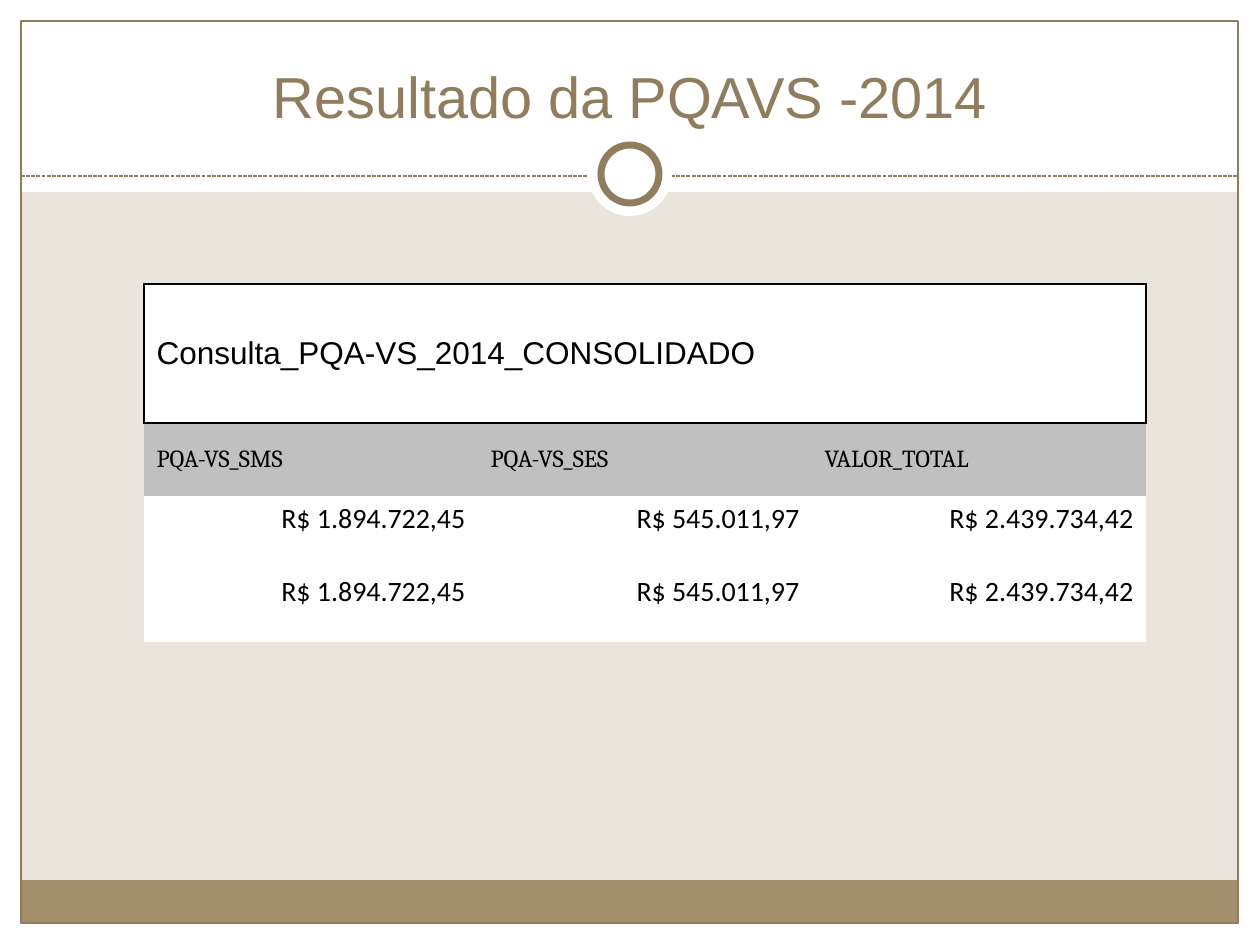
"""Build the PQAVS 2014 results slide with its consolidated table."""
from lxml import etree
from pptx import Presentation
from pptx import util as u
from pptx.dml.color import RGBColor
from pptx.enum import dml, shapes, text
from pptx.oxml.ns import qn

COLORS = {"paper": "E9E5DC", "white": "FFFFFF", "band": "A28E6A",
          "accent": "8F7D5E", "black": "000000", "header": "C0C0C0"}
TITLE = "Resultado da PQAVS -2014"
CAPTION = "Consulta_PQA-VS_2014_CONSOLIDADO"
HEADERS = ["PQA-VS_SMS", "PQA-VS_SES", "VALOR_TOTAL"]
AMOUNTS = ["R$ 1.894.722,45", "R$ 545.011,97", "R$ 2.439.734,42"]
ROWS = [
    {"texts": [CAPTION], "height": 139, "fill": "white", "size": 18, "font": "Arial"},
    {"texts": HEADERS, "height": 73, "fill": "header", "size": 14, "font": "Cambria"},
    {"texts": AMOUNTS, "height": 73, "fill": "white", "size": 16, "font": "Calibri"},
    {"texts": AMOUNTS, "height": 73, "fill": "white", "size": 16, "font": "Calibri"},
]
CAPTION_BORDERS = [("L", "R", "T", "B"), ("T",), ("R", "T")]
FRAME = [
    ("RECTANGLE", (0, 924, 1260, 21), "white", None, 0),
    ("RECTANGLE", (0, 0, 1260, 192), "white", None, 0),
    ("RECTANGLE", (0, 0, 21, 945), "white", None, 0),
    ("RECTANGLE", (1239, 0, 21, 945), "white", None, 0),
    ("RECTANGLE", (21, 880, 1217, 43), "band", None, 0),
    ("RECTANGLE", (21, 21, 1217, 902), None, "accent", 0.75),
]
MEDALLION = [
    ("OVAL", (588, 132, 84, 84), "white", None, 0),
    ("OVAL", (601, 145, 58, 58), "white", "accent", 4),
]
DIVIDER = (21, 176, 1239, 176)
TABLE_LEFT, TABLE_TOP, COLUMN_WIDTH = 144, 284, 334
PLAIN_TABLE_STYLE = "{2D5ABB26-0587-4C30-8999-92F81FD0307C}"


def px(*lengths):
    return [u.Emu(round(length * 914400 / 126)) for length in lengths]


def color(name):
    return RGBColor.from_string(COLORS[name])


def paint(fill, name):
    if name:
        fill.solid()
        fill.fore_color.rgb = color(name)
    else:
        fill.background()


def write(frame, words, size, font, ink="black", align="LEFT"):
    paragraph = frame.paragraphs[0]
    paragraph.alignment = text.PP_ALIGN[align]
    run = paragraph.add_run()
    run.text = words
    run.font.size = u.Pt(size)
    run.font.name = font
    run.font.color.rgb = color(ink)


def add_shapes(slide, items):
    for kind, box, fill, line, width in items:
        shape = slide.shapes.add_shape(shapes.MSO_SHAPE[kind], *px(*box))
        shape.shadow.inherit = False
        paint(shape.fill, fill)
        paint(shape.line.fill, line)
        if line:
            shape.line.width = u.Pt(width)


def add_divider(slide):
    divider = slide.shapes.add_connector(shapes.MSO_CONNECTOR.STRAIGHT, *px(*DIVIDER))
    divider.line.color.rgb = color("accent")
    divider.line.width = u.Pt(0.75)
    divider.line.dash_style = dml.MSO_LINE.SQUARE_DOT
    properties = divider._element.spPr
    etree.SubElement(properties, qn("a:effectLst"))


def add_borders(cell, sides):
    properties = cell._tc.get_or_add_tcPr()
    for side in sides:
        line = etree.SubElement(properties, qn(f"a:ln{side}"), w=str(u.Pt(1)))
        fill = etree.SubElement(line, qn("a:solidFill"))
        etree.SubElement(fill, qn("a:srgbClr"), val=COLORS["black"])


def add_table(slide):
    width, height = COLUMN_WIDTH * len(HEADERS), sum(row["height"] for row in ROWS)
    box = px(TABLE_LEFT, TABLE_TOP, width, height)
    table = slide.shapes.add_table(len(ROWS), len(HEADERS), *box).table
    table._tbl.tblPr.find(qn("a:tableStyleId")).text = PLAIN_TABLE_STYLE
    table.first_row = table.horz_banding = False
    for column in table.columns:
        column.width = px(COLUMN_WIDTH)[0]
    for index, sides in enumerate(CAPTION_BORDERS):
        add_borders(table.cell(0, index), sides)
    table.cell(0, 0).merge(table.cell(0, len(HEADERS) - 1))
    for row_index, row in enumerate(ROWS):
        table.rows[row_index].height = px(row["height"])[0]
        is_amount = row["texts"] is AMOUNTS
        for column_index, words in enumerate(row["texts"]):
            cell = table.cell(row_index, column_index)
            paint(cell.fill, row["fill"])
            cell.vertical_anchor = text.MSO_ANCHOR["TOP" if is_amount else "MIDDLE"]
            write(cell.text_frame, words, row["size"], row["font"],
                  align="RIGHT" if is_amount else "LEFT")


def add_title(slide):
    title = slide.shapes.title
    title.left, title.top, title.width, title.height = px(42, 31, 1176, 105)
    title.text_frame.vertical_anchor = text.MSO_ANCHOR.BOTTOM
    write(title.text_frame, TITLE, 33, "Arial", ink="accent", align="CENTER")
    slide.shapes._spTree.append(title._element)


def main():
    presentation = Presentation()
    presentation.slide_width, presentation.slide_height = px(1260, 945)
    slide = presentation.slides.add_slide(presentation.slide_layouts[5])
    paint(slide.background.fill, "paper")
    add_shapes(slide, FRAME)
    add_divider(slide)
    add_shapes(slide, MEDALLION)
    add_title(slide)
    add_table(slide)
    presentation.save("out.pptx")


if __name__ == "__main__":
    main()
